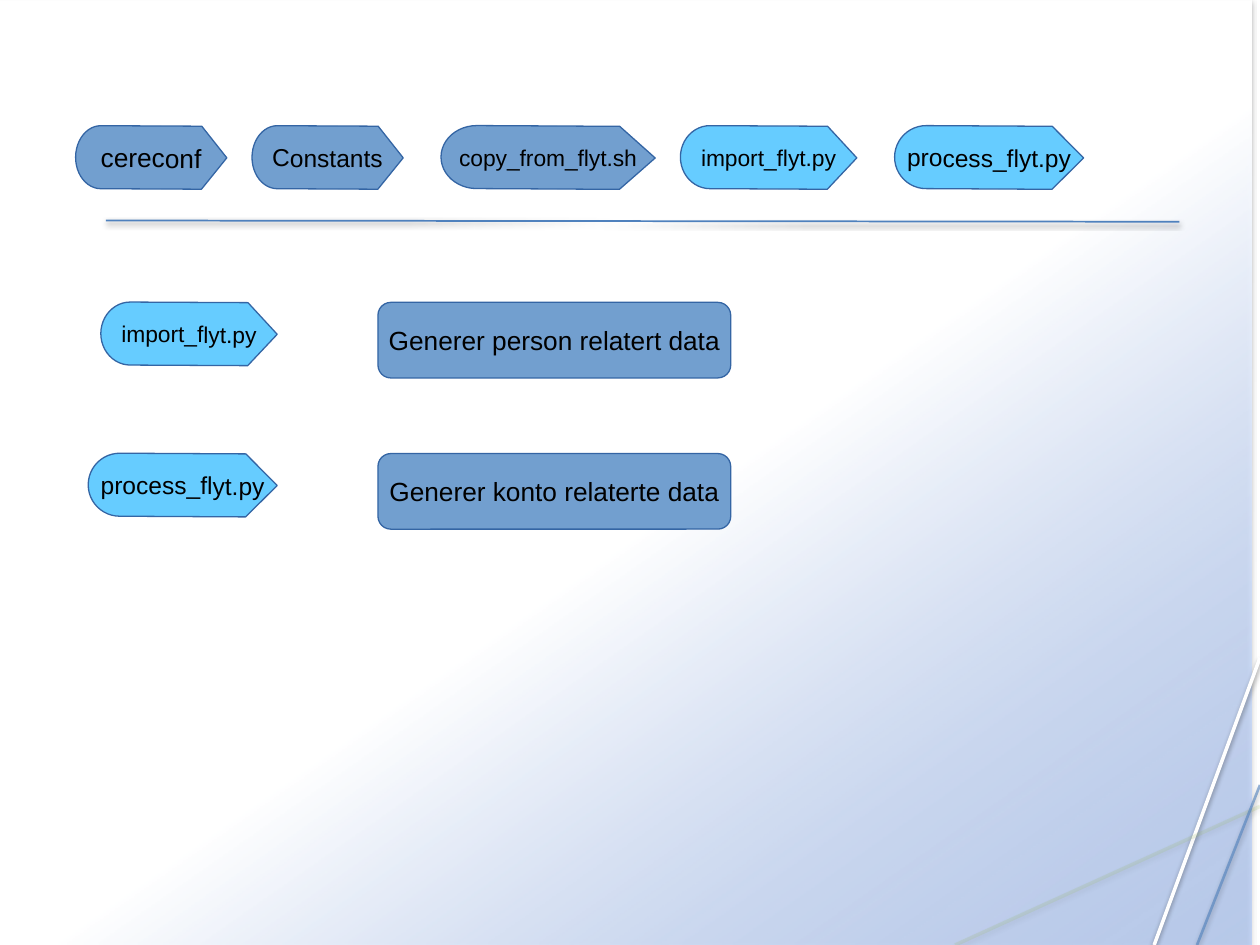
from lxml.etree import SubElement
from pptx import Presentation
from pptx.dml.color import RGBColor
from pptx.enum.shapes import MSO_CONNECTOR, MSO_SHAPE
from pptx.enum.text import MSO_ANCHOR, PP_ALIGN
from pptx.oxml import parse_xml
from pptx.oxml.ns import nsdecls, qn
from pptx.util import Inches, Pt

U = Inches(0.1)  # grid unit: the slide is 100 columns by 75 rows
DARK, LIGHT = "729FCF", "66CCFF"


def rgb(value):
    return RGBColor.from_string(value)


def add_shadow(sp, alpha, dist):
    """Give a shape or connector a soft shadow straight below it."""
    sp._element.spPr.append(parse_xml(
        f'<a:effectLst {nsdecls("a")}><a:outerShdw blurRad="{Pt(3.1)}" dist="{Pt(dist)}" '
        f'dir="5400000" rotWithShape="0"><a:srgbClr val="000000">'
        f'<a:alpha val="{alpha * 1000}"/></a:srgbClr></a:outerShdw></a:effectLst>'))


prs = Presentation()
prs.slide_width, prs.slide_height = 100 * U, 75 * U
s = prs.slides.add_slide(prs.slide_layouts[6])

# Background wash, slightly off to the left
sp = s.shapes.add_shape(MSO_SHAPE.RECTANGLE, Inches(-0.07), 0, 100 * U, 75 * U)
sp.line.fill.background()
sp._element.spPr.find(qn("a:prstGeom")).addnext(parse_xml(
    f'<a:gradFill {nsdecls("a")} rotWithShape="1"><a:gsLst>'
    '<a:gs pos="54000"><a:srgbClr val="FFFFFF"/></a:gs>'
    '<a:gs pos="100000"><a:srgbClr val="A4C4FF"><a:alpha val="54000"/></a:srgbClr></a:gs>'
    '</a:gsLst><a:lin ang="3300000" scaled="0"/></a:gradFill>'))
add_shadow(sp, 35, 1.8)

# Corner decoration and the rule: x1, y1, x2, y2, colour, width, opacity
for x1, y1, x2, y2, color, width, opacity in [
    (100, 52.2, 91.6, 75, "FFFFFF", 2, 100),
    (100, 64, 75.8, 75, "9BBB59", 2, 16),
    (100, 62.3, 95, 75, "4F81BD", 1.5, 60),
    (8.4, 17.5, 93.6, 17.6, "4F81BD", 1, 100),
]:
    line = s.shapes.add_connector(
        MSO_CONNECTOR.STRAIGHT, *(int(v * U) for v in (x1, y1, x2, y2)))
    line.line.color.rgb = rgb(color)
    line.line.width = Pt(width)
    if opacity < 100:
        clr = line._element.spPr.find(".//" + qn("a:srgbClr"))
        SubElement(clr, qn("a:alpha"), val=str(opacity * 1000))
    add_shadow(line, 38, 1.6)

# Scripts and steps: kind, column, row, width, height, fill, size, text
TAG, BOX = MSO_SHAPE.FLOWCHART_DISPLAY, MSO_SHAPE.ROUNDED_RECTANGLE
for kind, x, y, w, h, color, size, text in [
    (TAG, 6, 10, 12, 5, DARK, 15, "cereconf"),
    (TAG, 20, 10, 12, 5, DARK, 14, "Constants"),
    (TAG, 35, 10, 17, 5, DARK, 13, "copy_from_flyt.sh"),
    (TAG, 54, 10, 14, 5, LIGHT, 13, "import_flyt.py"),
    (TAG, 71, 10, 15, 5, LIGHT, 14, "process_flyt.py"),
    (TAG, 8, 24, 14, 5, LIGHT, 13, "import_flyt.py"),
    (TAG, 7, 36, 15, 5, LIGHT, 14, "process_flyt.py"),
    (BOX, 30, 24, 28, 6, DARK, 15, "Generer person relatert data"),
    (BOX, 30, 36, 28, 6, DARK, 15, "Generer konto relaterte data"),
]:
    sp = s.shapes.add_shape(kind, x * U, y * U, w * U, h * U)
    sp.shadow.inherit = False
    sp.fill.solid()
    sp.fill.fore_color.rgb = rgb(color)
    sp.line.color.rgb = rgb("3465A4")
    sp.line.width = Pt(0.75)
    if kind == TAG:
        sp.rotation = 0.3
        sp._element.spPr.xfrm.set("flipH", "1")
    else:
        sp.adjustments[0] = 0.17
    tf = sp.text_frame
    tf.word_wrap = False
    tf.vertical_anchor = MSO_ANCHOR.MIDDLE
    p = tf.paragraphs[0]
    p.text = text
    p.alignment = PP_ALIGN.CENTER
    p.font.name, p.font.size = "Arial", Pt(size)
    p.font.color.rgb = rgb("000000")

prs.save("out.pptx")
